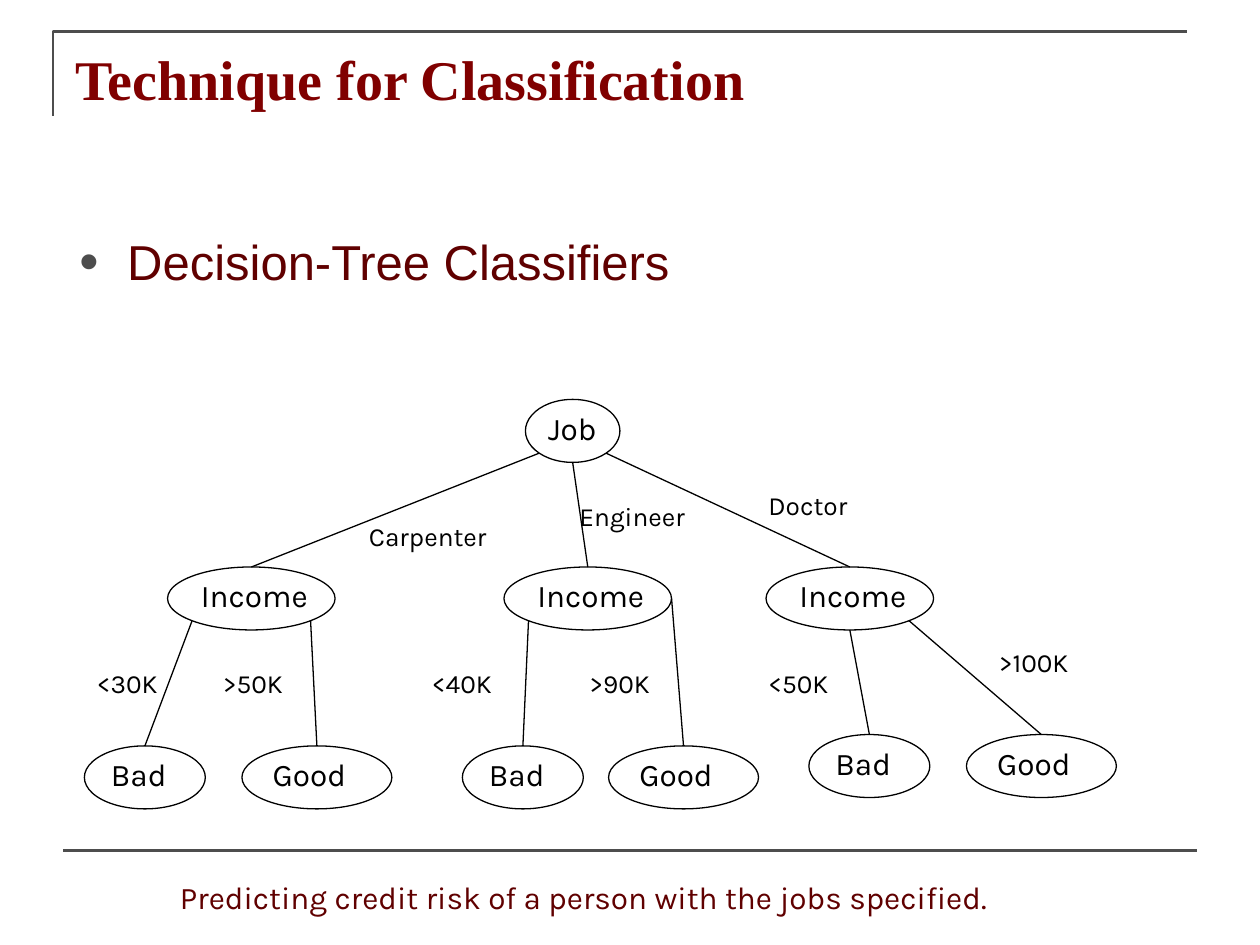
"""Build a slide showing a decision tree that predicts credit risk by job."""
from math import sqrt

from lxml.etree import SubElement
from pptx import Presentation
from pptx.dml.color import RGBColor
from pptx.enum.shapes import MSO_CONNECTOR, MSO_SHAPE
from pptx.enum.text import MSO_ANCHOR, MSO_AUTO_SIZE, PP_ALIGN
from pptx.oxml.ns import qn
from pptx.util import Inches, Pt

THEME = {
    "title": ("Times New Roman", 32, "800000"),
    "list": ("Arial", 28, "600000"),
    "node": ("Karla", 18, "000000"),
    "label": ("Karla", 15, "000000"),
    "caption": ("Karla", 18, "600000"),
    "rule": "4D4D4D",
    "ink": "000000",
}

TITLE = "Technique for Classification"
TOPIC = "Decision-Tree Classifiers"
CAPTION = "Predicting credit risk of a person with the jobs specified."

NODE_HEIGHT = 0.5
NODE_WIDTHS = {"Job": 0.75, "Income": 1.33, "Bad": 0.96, "Good": 1.19}
NODES = {
    "job": ("Job", 4.17, 3.17),
    "carpenter": ("Income", 1.33, 4.5),
    "engineer": ("Income", 4, 4.5),
    "doctor": ("Income", 6.08, 4.5),
    "carpenter bad": ("Bad", 0.67, 5.92),
    "carpenter good": ("Good", 1.92, 5.92),
    "engineer bad": ("Bad", 3.67, 5.92),
    "engineer good": ("Good", 4.83, 5.92),
    "doctor bad": ("Bad", 6.42, 5.83),
    "doctor good": ("Good", 7.67, 5.83),
}

DIAGONAL = 1 / sqrt(2)
SIDES = {
    "bottom left": (-DIAGONAL, DIAGONAL),
    "bottom": (0, 1),
    "bottom right": (DIAGONAL, DIAGONAL),
    "right": (1, 0),
    "top": (0, -1),
}

BRANCHES = [
    ("job", "bottom left", "carpenter", "Carpenter", 2.83, 4.08),
    ("job", "bottom", "engineer", "Engineer", 4.5, 3.92),
    ("job", "bottom right", "doctor", "Doctor", 6, 3.83),
    ("carpenter", "bottom left", "carpenter bad", "<30K", 0.67, 5.25),
    ("carpenter", "bottom right", "carpenter good", ">50K", 1.67, 5.25),
    ("engineer", "bottom left", "engineer bad", "<40K", 3.33, 5.25),
    ("engineer", "right", "engineer good", ">90K", 4.58, 5.25),
    ("doctor", "bottom", "doctor bad", "<50K", 6, 5.25),
    ("doctor", "bottom right", "doctor good", ">100K", 7.83, 5.08),
]


def color(value):
    return RGBColor.from_string(value)


def write(shape, text, style, bold=False):
    name, size, ink = THEME[style]
    frame = shape.text_frame
    frame.text = text
    frame.word_wrap = True
    frame.auto_size = MSO_AUTO_SIZE.NONE
    frame.vertical_anchor = MSO_ANCHOR.TOP
    paragraph = frame.paragraphs[0]
    paragraph.alignment = PP_ALIGN.LEFT
    font = paragraph.runs[0].font
    font.name, font.size, font.bold = name, Pt(size), bold
    font.color.rgb = color(ink)
    return paragraph


def place(shape, left, top, width, height):
    shape.left, shape.top = Inches(left), Inches(top)
    shape.width, shape.height = Inches(width), Inches(height)


def add_text(page, text, style, left, top, width, height):
    box = page.shapes.add_textbox(*map(Inches, (left, top, width, height)))
    write(box, text, style)


def add_line(page, start, end, ink, weight):
    line = page.shapes.add_connector(
        MSO_CONNECTOR.STRAIGHT, *map(Inches, (*start, *end)))
    line.line.color.rgb = color(ink)
    line.line.width = Pt(weight)
    SubElement(line._element.spPr, qn("a:effectLst"))


def add_corner(page):
    builder = page.shapes.build_freeform(Inches(0.42), Inches(0.92))
    builder.add_line_segments(
        [(Inches(0.42), Inches(0.25)), (Inches(9.42), Inches(0.25))], close=False)
    corner = builder.convert_to_shape()
    corner.shadow.inherit = False
    corner.fill.background()
    corner.line.color.rgb = color(THEME["rule"])
    corner.line.width = Pt(1.5)


def add_node(page, text, left, top):
    node = page.shapes.add_shape(
        MSO_SHAPE.OVAL, *map(Inches, (left, top, NODE_WIDTHS[text], NODE_HEIGHT)))
    node.shadow.inherit = False
    node.fill.background()
    node.line.color.rgb = color(THEME["ink"])
    node.line.width = Pt(0.75)
    write(node, text, "node")
    frame = node.text_frame
    frame.margin_left = Inches(0.07)
    frame.margin_right = frame.margin_top = frame.margin_bottom = 0


def side_point(name, side):
    text, left, top = NODES[name]
    across, down = SIDES[side]
    return (left + NODE_WIDTHS[text] / 2 * (1 + across),
            top + NODE_HEIGHT / 2 * (1 + down))


def add_bullet(paragraph):
    properties = paragraph._p.get_or_add_pPr()
    properties.set("marL", str(Inches(0.38)))
    properties.set("indent", str(-Inches(0.38)))
    tint = SubElement(properties, qn("a:buClr"))
    SubElement(tint, qn("a:srgbClr"), val=THEME["rule"])
    SubElement(properties, qn("a:buSzPct"), val="112000")
    SubElement(properties, qn("a:buFont"), typeface="Arial")
    SubElement(properties, qn("a:buChar"), char="•")


def main():
    deck = Presentation()
    deck.slide_width, deck.slide_height = Inches(10), Inches(7.5)
    page = deck.slides.add_slide(deck.slide_layouts[1])

    title, body = page.placeholders
    place(title, 0.5, 0.3, 9, 1.25)
    write(title, TITLE, "title", bold=True)
    place(body, 0.53, 1.79, 9, 4.95)
    add_bullet(write(body, TOPIC, "list"))

    add_corner(page)
    add_line(page, (0.5, 6.75), (9.5, 6.75), THEME["rule"], 1.5)
    for node in NODES.values():
        add_node(page, *node)
    for parent, side, child, label, left, top in BRANCHES:
        add_line(page, side_point(parent, side), side_point(child, "top"),
                 THEME["ink"], 0.75)
        width = 1.42 if parent == "job" else 0.92
        add_text(page, label, "label", left, top, width, 0.35)
    add_text(page, CAPTION, "caption", 1.33, 6.92, 6.75, 0.4)

    deck.save("out.pptx")


if __name__ == "__main__":
    main()
